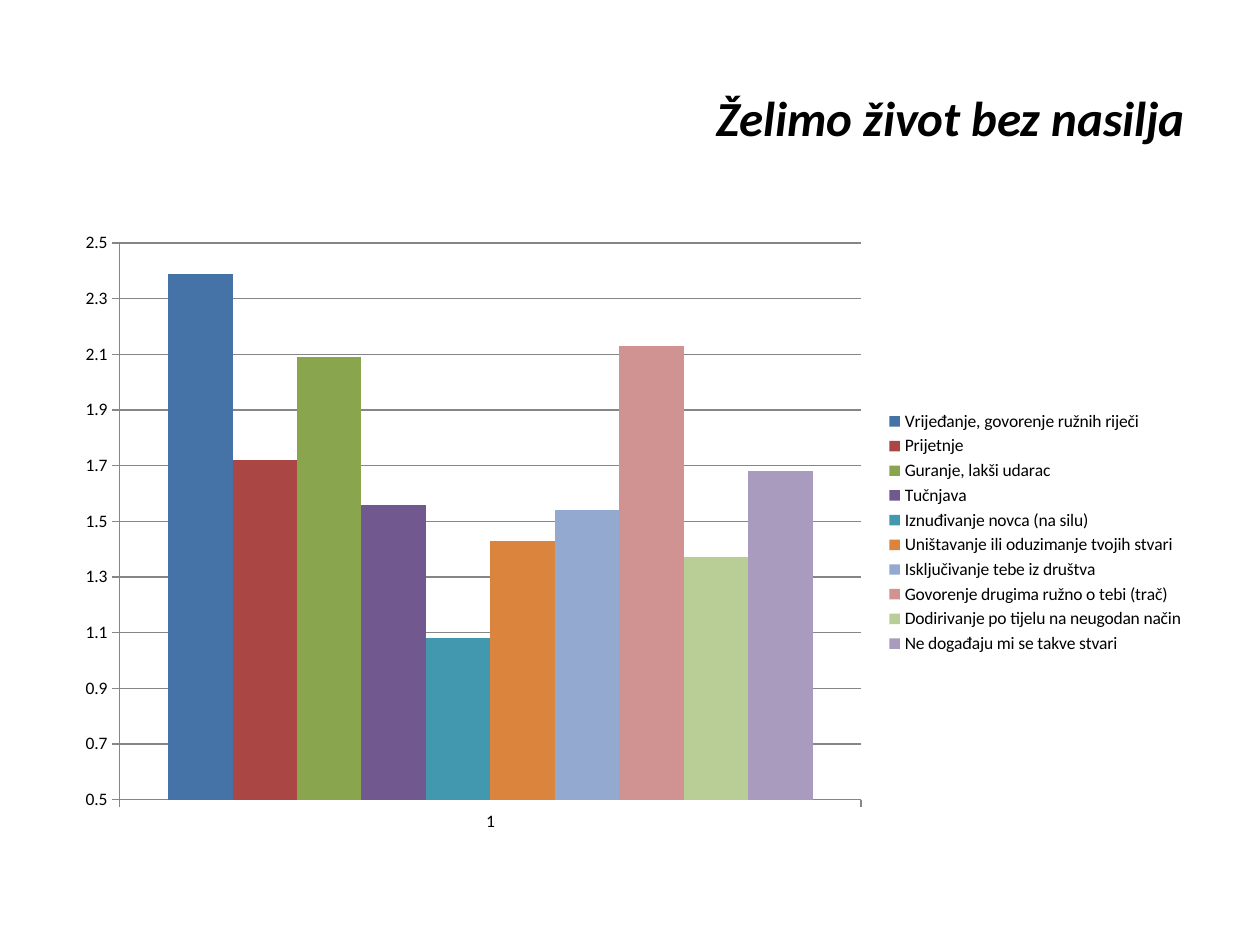
from dataclasses import dataclass

from pptx import Presentation
from pptx.chart.data import CategoryChartData
from pptx.dml.color import RGBColor
from pptx.enum.chart import XL_CHART_TYPE as ChartType
from pptx.enum.chart import XL_LEGEND_POSITION as LegendPosition
from pptx.enum.chart import XL_TICK_MARK as TickMark
from pptx.enum.text import MSO_ANCHOR as Anchor
from pptx.enum.text import PP_ALIGN as Align
from pptx.util import Cm, Pt


@dataclass(frozen=True)
class Theme:
    font: str = "Calibri"
    text: str = "000000"
    lines: str = "868686"
    title_size: int = 28
    chart_size: int = 10
    bars: tuple = ("4572A7", "AA4643", "89A54E", "71588F", "4198AF",
                   "DB843D", "93A9CF", "D19392", "B9CD96", "A99BBD")


SURVEY = {
    "Vrijeđanje, govorenje ružnih riječi": 2.39,
    "Prijetnje": 1.72,
    "Guranje, lakši udarac": 2.09,
    "Tučnjava": 1.56,
    "Iznuđivanje novca (na silu)": 1.08,
    "Uništavanje ili oduzimanje tvojih stvari": 1.43,
    "Isključivanje tebe iz društva": 1.54,
    "Govorenje drugima ružno o tebi (trač)": 2.13,
    "Dodirivanje po tijelu na neugodan način": 1.37,
    "Ne događaju mi se takve stvari": 1.68,
}


def set_font(font, name, size, color, bold=False, italic=False):
    font.name = name
    font.size = Pt(size)
    font.color.rgb = RGBColor.from_string(color)
    font.bold = bold
    font.italic = italic


def add_span(para, text, **style):
    span = para.add_run()
    span.text = text
    set_font(span.font, **style)


class SlideBuilder:
    def __init__(self, page, theme):
        self.page = page
        self.theme = theme

    def title(self, text, left, top, width, height):
        box = self.page.shapes.add_textbox(Cm(left), Cm(top), Cm(width), Cm(height))
        frame = box.text_frame
        frame.word_wrap = True
        frame.vertical_anchor = Anchor.MIDDLE
        para = frame.paragraphs[0]
        para.alignment = Align.RIGHT
        add_span(para, text, name=self.theme.font, size=self.theme.title_size,
                 color=self.theme.text, bold=True, italic=True)

    def column_chart(self, values, left, top, width, height):
        data = CategoryChartData(number_format="0.00")
        data.categories = ["1"]
        for name, value in values.items():
            data.add_series(name, [value])
        chart = self.page.shapes.add_chart(
            ChartType.COLUMN_CLUSTERED, Cm(left), Cm(top), Cm(width), Cm(height), data).chart
        chart.has_title = False
        set_font(chart.font, self.theme.font, self.theme.chart_size, self.theme.text)

        # Columns
        plot = chart.plots[0]
        plot.vary_by_categories = False
        plot.gap_width = 150
        plot.overlap = 0
        for series, color in zip(plot.series, self.theme.bars):
            series.format.fill.solid()
            series.format.fill.fore_color.rgb = RGBColor.from_string(color)

        # Axes and gridlines
        scale = chart.value_axis
        scale.minimum_scale, scale.maximum_scale, scale.major_unit = 0.5, 2.5, 0.2
        scale.tick_labels.number_format = "0.0"
        scale.tick_labels.number_format_is_linked = False
        scale.has_major_gridlines = True
        for axis in (chart.category_axis, scale):
            axis.major_tick_mark = TickMark.OUTSIDE
            axis.minor_tick_mark = TickMark.NONE
        for part in (chart.category_axis, scale, scale.major_gridlines):
            part.format.line.color.rgb = RGBColor.from_string(self.theme.lines)
            part.format.line.width = Pt(0.75)

        # Legend
        chart.has_legend = True
        chart.legend.position = LegendPosition.RIGHT
        chart.legend.include_in_layout = False


def main():
    deck = Presentation()
    deck.slide_width, deck.slide_height = Cm(25.4), Cm(19.05)
    page = deck.slides.add_slide(deck.slide_layouts[6])
    builder = SlideBuilder(page, Theme())
    builder.title("Želimo život bez nasilja", 1.27, 0.76, 22.86, 3.18)
    builder.column_chart(SURVEY, 1.27, 4.45, 22.86, 12.57)
    deck.save("out.pptx")


if __name__ == "__main__":
    main()
